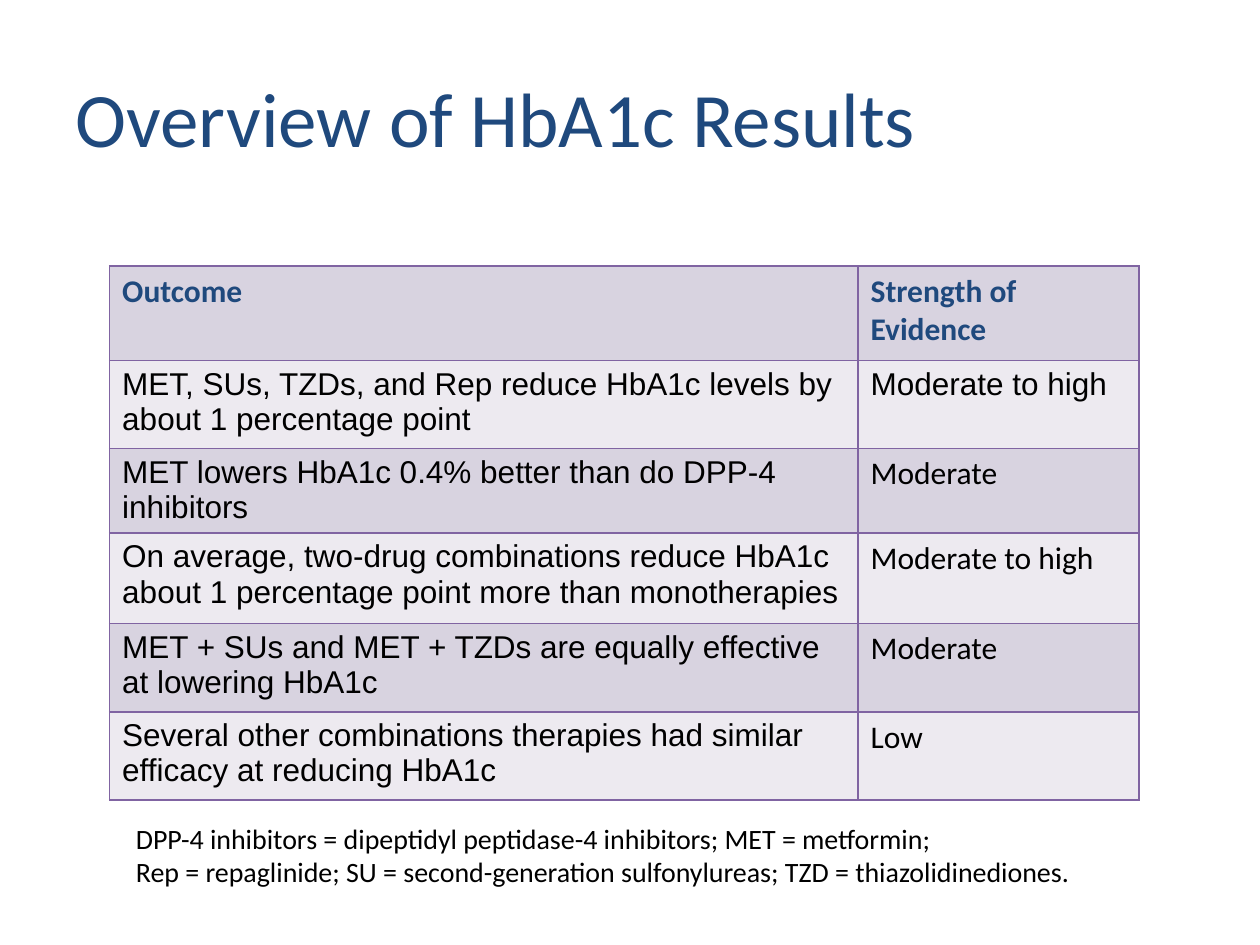
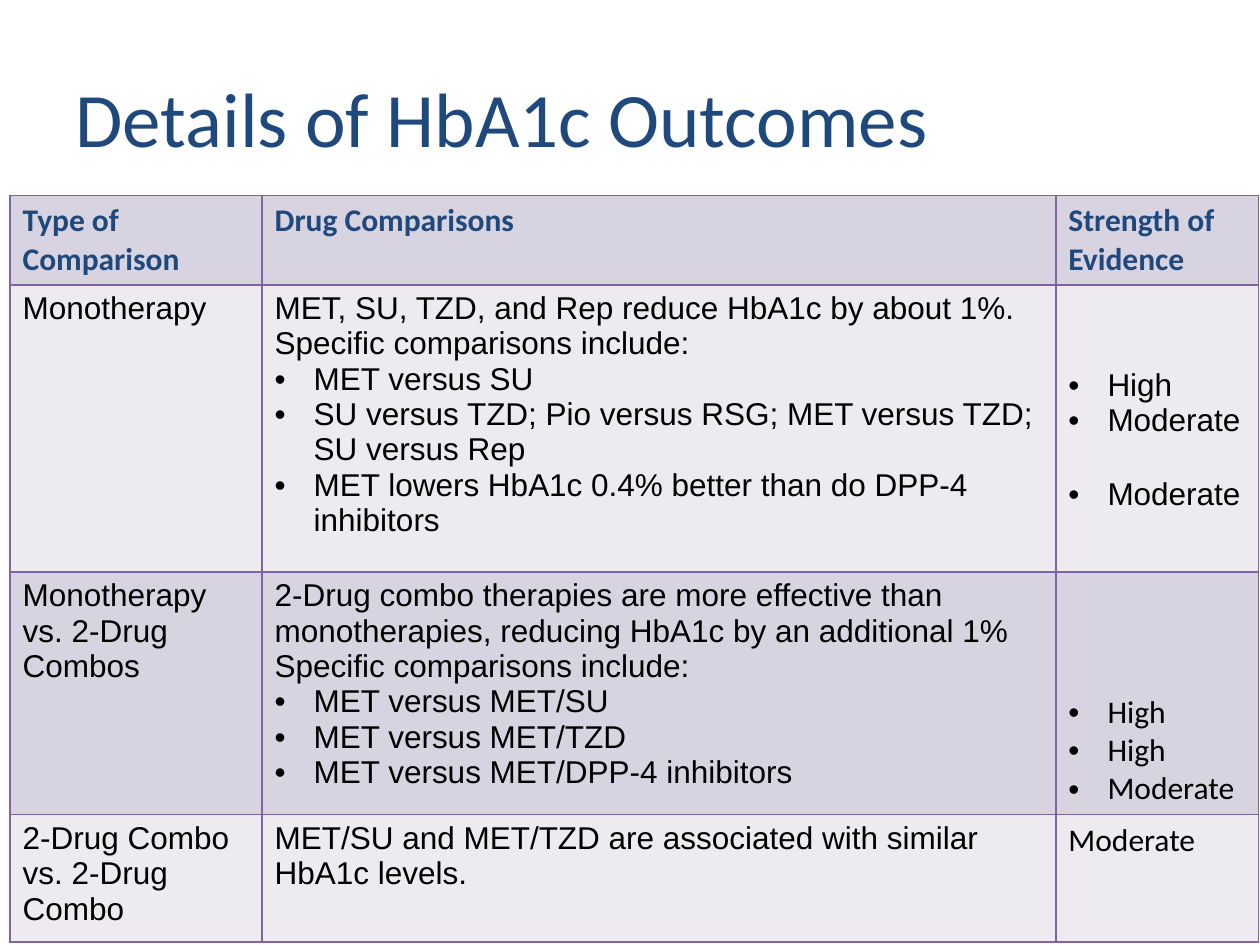
"""Build two slides of HbA1c result tables."""
from dataclasses import dataclass

from lxml import etree
from pptx import Presentation
from pptx import util as u
from pptx.dml.color import RGBColor
from pptx.enum import text
from pptx.oxml.ns import qn


@dataclass(frozen=True)
class Theme:
    """Colours, fonts and sizes shared by the slides."""
    navy: str = "1F497D"
    black: str = "000000"
    border: str = "8064A2"
    bands: tuple = ("D8D3E0", "EDEAF0")
    heading_font: str = "Calibri"
    body_font: str = "Arial"
    title_size: int = 44
    table_size: int = 18
    note_size: int = 16
    border_width: int = 1
    indent: float = 0.31
    inset: float = 0.05


@dataclass(frozen=True)
class Entry:
    """Hold a cell's lead text, bullets, top offset and gaps above bullets."""
    lead: str = ""
    bullets: tuple = ()
    drop: float = Theme.inset
    gaps: tuple = ()


THEME = Theme()
SLIDE_SIZE = (10, 7.5)
TITLE_BOX = (0.5, 0.3, 9, 1.25)
NOTE_BOX = (0.98, 6.47, 8.05, 0.64)

SLIDES = [
    {
        "title": "Overview of HbA1c Results",
        "corner": (0.87, 2.11),
        "columns": (5.94, 2.23),
        "heights": (0.75, 0.7, 0.67, 0.72, 0.7, 0.7),
        "rows": [
            ("Outcome", "Strength of Evidence"),
            ("MET, SUs, TZDs, and Rep reduce HbA1c levels by about 1 percentage point",
             "Moderate to high"),
            ("MET lowers HbA1c 0.4% better than do DPP-4 inhibitors", "Moderate"),
            ("On average, two-drug combinations reduce HbA1c about 1 percentage point "
             "more than monotherapies", "Moderate to high"),
            ("MET + SUs and MET + TZDs are equally effective at lowering HbA1c", "Moderate"),
            ("Several other combinations therapies had similar efficacy at reducing HbA1c",
             "Low"),
        ],
        "note": [
            "DPP-4 inhibitors = dipeptidyl peptidase-4 inhibitors; MET = metformin;",
            "Rep = repaglinide; SU = second-generation sulfonylureas; "
            "TZD = thiazolidinediones.",
        ],
    },
    {
        "title": "Details of HbA1c Outcomes",
        "corner": (0.08, 1.55),
        "columns": (2, 6.3, 1.61),
        "heights": (0.71, 2.28, 1.91, 1.01),
        "rows": [
            ("Type of Comparison", "Drug Comparisons", "Strength of Evidence"),
            ("Monotherapy",
             Entry("MET, SU, TZD, and Rep reduce HbA1c by about 1%.\n"
                   "Specific comparisons include:",
                   ("MET versus SU",
                    "SU versus TZD; Pio versus RSG; MET versus TZD; SU versus Rep",
                    "MET lowers HbA1c 0.4% better than do DPP-4 inhibitors")),
             Entry(bullets=("High", "Moderate", "Moderate"), drop=0.66, gaps=(0, 0, 22))),
            ("Monotherapy vs. 2-Drug Combos",
             Entry("2-Drug combo therapies are more effective than monotherapies, "
                   "reducing HbA1c by an additional 1%\nSpecific comparisons include:",
                   ("MET versus MET/SU", "MET versus MET/TZD",
                    "MET versus MET/DPP-4 inhibitors")),
             Entry(bullets=("High", "High", "Moderate"), drop=0.96)),
            ("2-Drug Combo vs. 2-Drug Combo",
             "MET/SU and MET/TZD are associated with similar HbA1c levels.",
             "Moderate"),
        ],
        "note": [],
    },
]


def style(paragraph, face, size, color, bold=False):
    """Set the font of a whole paragraph."""
    font = paragraph.font
    font.name, font.size, font.bold = face, u.Pt(size), bold
    font.color.rgb = RGBColor.from_string(color)


def add_bullet(paragraph):
    """Give a paragraph a round bullet and a hanging indent."""
    properties = paragraph._p.get_or_add_pPr()
    indent = u.Inches(THEME.indent)
    properties.set("marL", str(indent))
    properties.set("indent", str(-indent))
    etree.SubElement(properties, qn("a:buFont"), typeface=THEME.body_font)
    etree.SubElement(properties, qn("a:buChar"), char="•")


def add_borders(cell):
    """Draw a thin line on each side of a cell."""
    properties = cell._tc.get_or_add_tcPr()
    for side in "LRTB":
        line = etree.SubElement(properties, qn(f"a:ln{side}"),
                                w=str(u.Pt(THEME.border_width)))
        fill = etree.SubElement(line, qn("a:solidFill"))
        etree.SubElement(fill, qn("a:srgbClr"), val=THEME.border)


def fill_cell(cell, entry, band, face, color, bold):
    """Write an entry into a cell with its band colour and borders."""
    if isinstance(entry, str):
        entry = Entry(entry)
    add_borders(cell)
    cell.fill.solid()
    cell.fill.fore_color.rgb = RGBColor.from_string(band)
    cell.margin_top, cell.margin_bottom = u.Inches(entry.drop), u.Inches(THEME.inset)
    leads = [(entry.lead, False, 0)] if entry.lead else []
    gaps = entry.gaps or (0,) * len(entry.bullets)
    lines = leads + [(words, True, gap) for words, gap in zip(entry.bullets, gaps)]
    for index, (words, bulleted, gap) in enumerate(lines):
        frame = cell.text_frame
        paragraph = frame.add_paragraph() if index else frame.paragraphs[0]
        paragraph.text = words
        if gap:
            paragraph.space_before = u.Pt(gap)
        if bulleted:
            add_bullet(paragraph)
        style(paragraph, face, THEME.table_size, color, bold)


def add_results(page, content):
    """Add the banded results table."""
    rows, columns, heights = content["rows"], content["columns"], content["heights"]
    size = sum(columns), sum(heights)
    table = page.shapes.add_table(len(rows), len(columns),
                                  *map(u.Inches, content["corner"] + size)).table
    table.first_row = table.horz_banding = False
    for column, width in zip(table.columns, columns):
        column.width = u.Inches(width)
    for row, height in zip(table.rows, heights):
        row.height = u.Inches(height)
    for i, entries in enumerate(rows):
        for j, entry in enumerate(entries):
            header = i == 0
            rating = i > 1 and j == len(columns) - 1
            face = THEME.heading_font if header or rating else THEME.body_font
            color = THEME.navy if header else THEME.black
            fill_cell(table.cell(i, j), entry, THEME.bands[i % 2], face, color, header)


def add_title(page, words):
    """Place and format the title."""
    box = page.shapes.title
    box.left, box.top, box.width, box.height = map(u.Inches, TITLE_BOX)
    box.text_frame.text = words
    box.text_frame.vertical_anchor = text.MSO_ANCHOR.MIDDLE
    paragraph = box.text_frame.paragraphs[0]
    paragraph.alignment = text.PP_ALIGN.LEFT
    style(paragraph, THEME.heading_font, THEME.title_size, THEME.navy)


def add_note(page, lines):
    """Add the list of abbreviations below the table."""
    frame = page.shapes.add_textbox(*map(u.Inches, NOTE_BOX)).text_frame
    frame.word_wrap = True
    frame.text = "\n".join(lines)
    for paragraph in frame.paragraphs:
        style(paragraph, THEME.heading_font, THEME.note_size, THEME.black)


def main():
    """Build and save the deck."""
    deck = Presentation()
    deck.slide_width, deck.slide_height = map(u.Inches, SLIDE_SIZE)
    title_only = deck.slide_layouts.get_by_name("Title Only")
    for content in SLIDES:
        page = deck.slides.add_slide(title_only)
        add_title(page, content["title"])
        add_results(page, content)
        if content["note"]:
            add_note(page, content["note"])
    deck.save("out.pptx")


if __name__ == "__main__":
    main()
